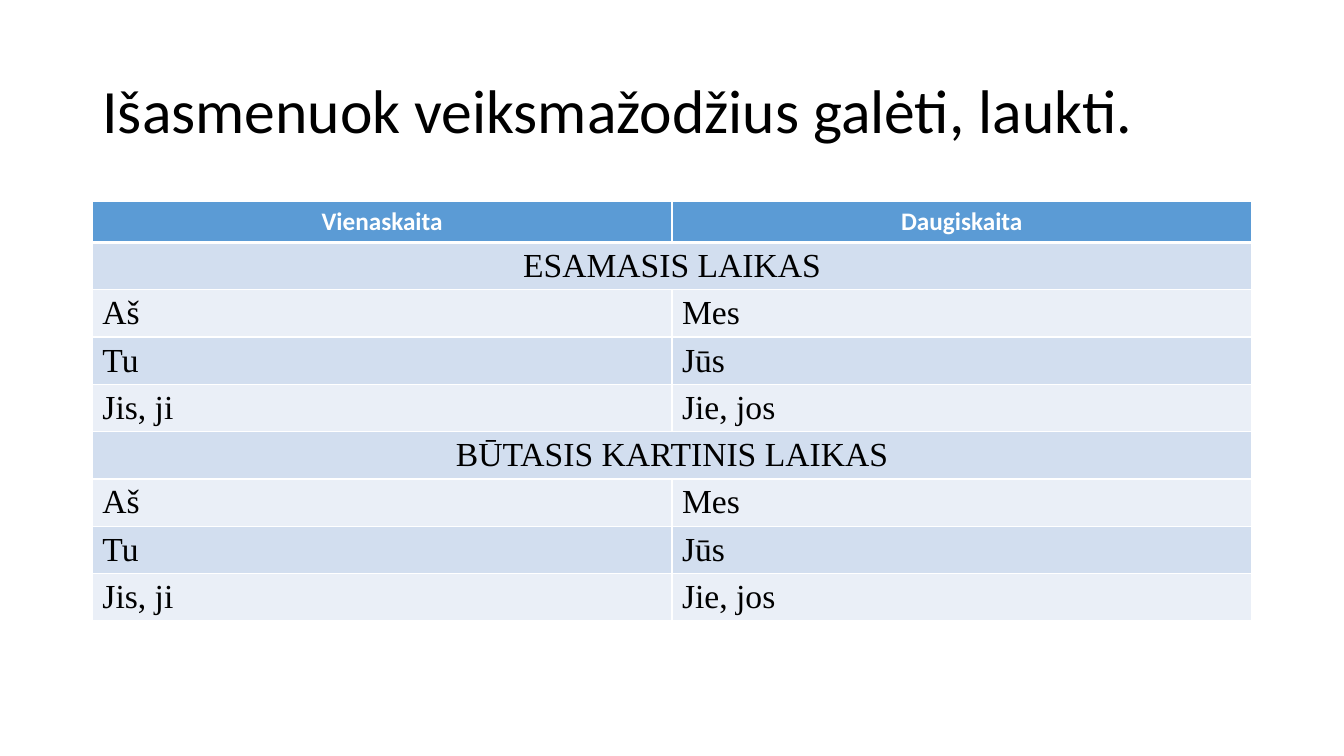
from lxml import etree
from pptx import Presentation
from pptx.dml.color import RGBColor
from pptx.enum.text import MSO_ANCHOR, MSO_AUTO_SIZE, PP_ALIGN
from pptx.oxml.ns import qn
from pptx.util import Pt

LEFT, CENTER = PP_ALIGN.LEFT, PP_ALIGN.CENTER
MIDDLE = MSO_ANCHOR.MIDDLE
NO_AUTOFIT = MSO_AUTO_SIZE.NONE

BLACK = RGBColor(0x00, 0x00, 0x00)
WHITE = RGBColor(0xFF, 0xFF, 0xFF)
HEADER_BLUE = RGBColor(0x5B, 0x9B, 0xD5)
BAND_DARK = RGBColor(0xD2, 0xDE, 0xEF)
BAND_LIGHT = RGBColor(0xEA, 0xEF, 0xF7)

PRONOUNS = [("Aš", "Mes"), ("Tu", "Jūs"), ("Jis, ji", "Jie, jos")]
ROWS = [
    ("Vienaskaita", "Daugiskaita"),
    ("ESAMASIS LAIKAS",),
    *PRONOUNS,
    ("BŪTASIS KARTINIS LAIKAS",),
    *PRONOUNS,
]
HEADER_HEIGHT, ROW_HEIGHT = 29.2, 33.8


def write(frame, text, font, size, color, bold=False, align=LEFT):
    para = frame.paragraphs[0]
    para.alignment = align
    span = para.add_run()
    span.text = text
    span.font.name = font
    span.font.size = Pt(size)
    span.font.bold = bold
    span.font.color.rgb = color
    return para


def add_borders(cell, top, bottom):
    """Draw white borders, 1 pt at the sides; call before the cell is filled."""
    properties = cell._tc.get_or_add_tcPr()
    for tag, width in (("a:lnL", 1), ("a:lnR", 1), ("a:lnT", top), ("a:lnB", bottom)):
        line = etree.SubElement(properties, qn(tag), w=str(Pt(width)))
        fill = etree.SubElement(line, qn("a:solidFill"))
        etree.SubElement(fill, qn("a:srgbClr"), val=str(WHITE))


deck = Presentation()
deck.slide_width, deck.slide_height = Pt(960), Pt(540)
page = deck.slides.add_slide(deck.slide_layouts[5])

title = page.shapes.title
title.left, title.top, title.width, title.height = Pt(66), Pt(28.75), Pt(828), Pt(104.4)
title.text_frame.auto_size = NO_AUTOFIT
title.text_frame.word_wrap = True
title.text_frame.vertical_anchor = MIDDLE
heading = write(title.text_frame, "Išasmenuok veiksmažodžius galėti, laukti.",
                "Calibri", 44, BLACK)
heading.line_spacing = 0.9

table_height = HEADER_HEIGHT + ROW_HEIGHT * (len(ROWS) - 1)
table = page.shapes.add_table(len(ROWS), 2, Pt(66), Pt(144), Pt(828), Pt(table_height)).table

for row, texts in enumerate(ROWS):
    is_header = row == 0
    is_tense = len(texts) == 1
    table.rows[row].height = Pt(HEADER_HEIGHT if is_header else ROW_HEIGHT)
    if is_header:
        color = HEADER_BLUE
    else:
        color = BAND_DARK if row % 2 else BAND_LIGHT
    for column in range(2):
        cell = table.cell(row, column)
        add_borders(cell, top=3 if row == 1 else 1, bottom=3 if is_header else 1)
        cell.fill.solid()
        cell.fill.fore_color.rgb = color
    if is_tense:
        table.cell(row, 0).merge(table.cell(row, 1))
    for column, text in enumerate(texts):
        frame = table.cell(row, column).text_frame
        if is_header:
            write(frame, text, "Calibri", 18, WHITE, bold=True, align=CENTER)
        else:
            write(frame, text, "Times New Roman", 24, BLACK, align=CENTER if is_tense else LEFT)

deck.save("out.pptx")
